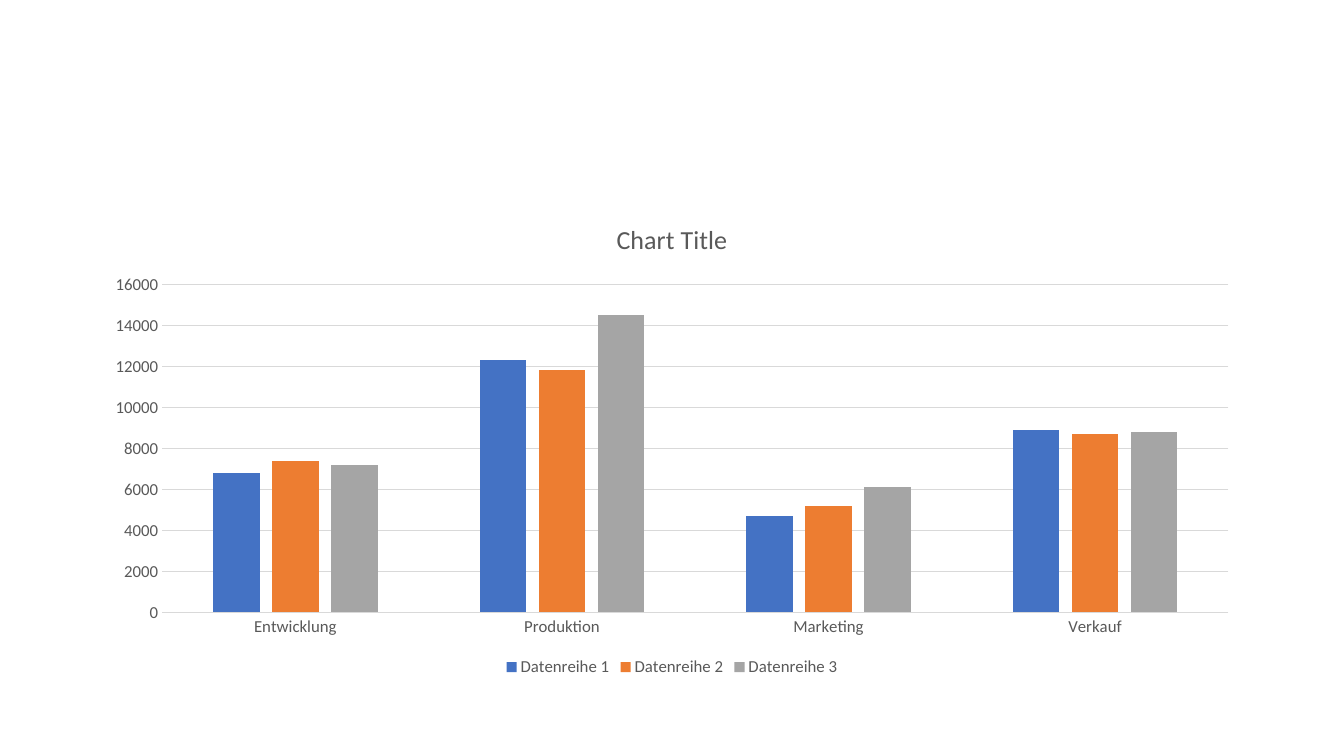
from pptx import Presentation
from pptx.chart.data import CategoryChartData
from pptx.dml.color import RGBColor
from pptx.enum.chart import XL_CHART_TYPE, XL_LEGEND_POSITION, XL_TICK_MARK
from pptx.util import Pt

# Content
TITLE = "Chart Title"
DEPARTMENTS = ["Entwicklung", "Produktion", "Marketing", "Verkauf"]
BLUE = RGBColor(0x44, 0x72, 0xC4)
ORANGE = RGBColor(0xED, 0x7D, 0x31)
GRAY = RGBColor(0xA5, 0xA5, 0xA5)
SERIES = [
    ("Datenreihe 1", BLUE, [6800, 12300, 4700, 8900]),
    ("Datenreihe 2", ORANGE, [7400, 11800, 5200, 8700]),
    ("Datenreihe 3", GRAY, [7200, 14500, 6100, 8800]),
]

# Style
TEXT_GRAY = RGBColor(0x59, 0x59, 0x59)
LINE_GRAY = RGBColor(0xD9, 0xD9, 0xD9)
FONT = "Calibri"
SLIDE_WIDTH, SLIDE_HEIGHT = 960, 540
CHART_WIDTH, CHART_HEIGHT, CHART_TOP = 828, 342.6, 144


def style_font(font, size=12, color=TEXT_GRAY, bold=False):
    font.name = FONT
    font.size = Pt(size)
    font.bold = bold
    font.color.rgb = color


def write_text(frame, text, **font_format):
    paragraph = frame.paragraphs[0]
    run = paragraph.add_run()
    run.text = text
    style_font(run.font, **font_format)


def style_line(line):
    line.color.rgb = LINE_GRAY
    line.width = Pt(0.75)


def main():
    presentation = Presentation()
    presentation.slide_width = Pt(SLIDE_WIDTH)
    presentation.slide_height = Pt(SLIDE_HEIGHT)
    slide = presentation.slides.add_slide(presentation.slide_layouts[6])

    # Chart, centred across the slide
    figures = CategoryChartData(number_format="General")
    figures.categories = DEPARTMENTS
    for name, _, values in SERIES:
        figures.add_series(name, values)
    chart = slide.shapes.add_chart(
        XL_CHART_TYPE.COLUMN_CLUSTERED,
        Pt((SLIDE_WIDTH - CHART_WIDTH) / 2), Pt(CHART_TOP),
        Pt(CHART_WIDTH), Pt(CHART_HEIGHT), figures).chart
    style_font(chart.font)

    # Title and legend
    write_text(chart.chart_title.text_frame, TITLE, size=18.6)
    chart.chart_title.include_in_layout = False
    chart.has_legend = True
    chart.legend.position = XL_LEGEND_POSITION.BOTTOM
    chart.legend.include_in_layout = False
    style_font(chart.legend.font)

    # Columns
    columns = chart.plots[0]
    columns.gap_width = 219
    columns.overlap = -27
    columns.vary_by_categories = False
    for series, (_, color, _) in zip(columns.series, SERIES):
        series.format.fill.solid()
        series.format.fill.fore_color.rgb = color
        series.invert_if_negative = False

    # Axes
    departments, amounts = chart.category_axis, chart.value_axis
    for axis in (departments, amounts):
        axis.major_tick_mark = XL_TICK_MARK.NONE
        axis.minor_tick_mark = XL_TICK_MARK.NONE
        style_font(axis.tick_labels.font)
    style_line(departments.format.line)
    amounts.format.line.fill.background()
    amounts.minimum_scale, amounts.maximum_scale = 0, 16000
    amounts.major_unit = 2000
    amounts.has_major_gridlines = True
    style_line(amounts.major_gridlines.format.line)

    presentation.save("out.pptx")


if __name__ == "__main__":
    main()
